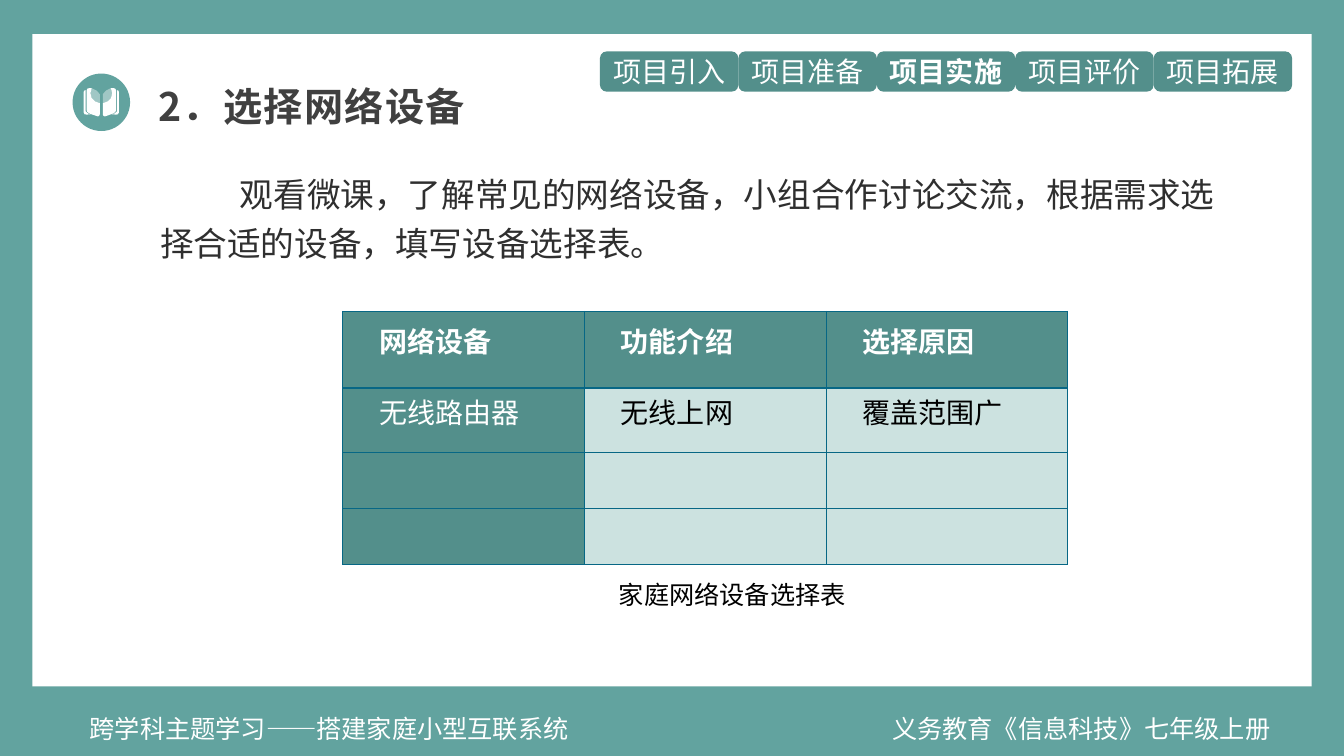
from pptx import Presentation
from pptx.dml.color import RGBColor
from pptx.enum.shapes import MSO_SHAPE
from pptx.enum.text import MSO_ANCHOR, MSO_AUTO_SIZE, PP_ALIGN
from pptx.oxml.ns import qn
from pptx.util import Inches, Pt
from lxml.etree import SubElement

W, H = Inches(13.33), Inches(7.5)
FONT = "Noto Sans CJK SC"
COLORS = {
    "frame": "62A39F", "deep": "538F8B", "pale": "CCE2E0", "border": "076785",
    "white": "FFFFFF", "black": "000000", "title": "404040", "body": "2F2F2F",
}
TABS = ["项目引入", "项目准备", "项目实施", "项目评价", "项目拓展"]
CURRENT_TAB = "项目实施"
ROWS = [
    ["网络设备", "功能介绍", "选择原因"],
    ["无线路由器", "无线上网", "覆盖范围广"],
    ["", "", ""],
    ["", "", ""],
]
ROW_SHARES = [10.13, 8.53, 7.4, 7.4]

# Right half of the book, in 570ths of the icon's width from its centre
PAGE = [(15, 10), (15, 120), (22, 135), (35, 140), (95, 120), (120, 110),
        (140, 95), (145, 80), (145, -120), (138, -135), (120, -140),
        (95, -140), (108, -90), (95, -40), (65, -10)]
COVER = [(145, 100), (130, 112), (105, 120), (145, 122), (165, 120),
         (175, 100), (175, -100), (170, -115), (155, -120), (155, 90)]
LEAF = [(95, -140), (45, -115), (15, -80), (15, 10), (65, -10), (95, -40),
        (108, -90)]


def across(share):
    """Length of a percentage of the slide's width."""
    return round(W * share / 100)


def down(share):
    """Length of a percentage of the slide's height."""
    return round(H * share / 100)


def box(x, y, w, h):
    return across(x), down(y), across(w), down(h)


def rgb(name):
    return RGBColor.from_string(COLORS[name])


def paint(sp, color):
    sp.shadow.inherit = False
    sp.fill.solid()
    sp.fill.fore_color.rgb = rgb(color)
    sp.line.fill.background()


def style(p, size, color, bold=False, font=FONT):
    p.font.size, p.font.bold, p.font.name = Pt(size), bold, font
    p.font.color.rgb = rgb(color)
    SubElement(p.font._element, qn("a:ea")).set("typeface", FONT)


def indent(p, length):
    pPr = p._p.get_or_add_pPr()
    pPr.set("marL", "0")
    pPr.set("indent", str(length))


def add_shape(s, kind, area, color):
    sp = s.shapes.add_shape(kind, *area)
    paint(sp, color)
    return sp


def add_text(s, area, text, size, color, bold=False, wrap=True):
    tf = s.shapes.add_textbox(*area).text_frame
    tf.word_wrap = wrap
    tf.auto_size = MSO_AUTO_SIZE.SHAPE_TO_FIT_TEXT
    p = tf.paragraphs[0]
    p.text = text
    style(p, size, color, bold)
    return p


def add_tabs(s):
    width = 10.3
    for i, label in enumerate(TABS):
        area = box(44.64 + i * width, 6.8, width, 5.33)
        tf = add_shape(s, MSO_SHAPE.ROUNDED_RECTANGLE, area, "deep").text_frame
        tf.vertical_anchor = MSO_ANCHOR.MIDDLE
        p = tf.paragraphs[0]
        p.text = label
        p.alignment = PP_ALIGN.CENTER
        style(p, 20, "white", label == CURRENT_TAB)


def add_mirrored(s, points, centre, scale):
    """Draw an outline and its mirror image as one white shape."""
    mirror = [(-x, y) for x, y in points]
    fb = s.shapes.build_freeform(*points[0], scale=scale)
    fb.add_line_segments(points[1:])
    fb.move_to(*mirror[0])
    fb.add_line_segments(mirror[1:])
    sp = fb.convert_to_shape(*centre)
    paint(sp, "white")
    return sp


def add_book_icon(s):
    x, y, w, h = box(5.4, 9.73, 4.28, 7.6)
    add_shape(s, MSO_SHAPE.OVAL, (x, y, w, h), "frame")
    centre, scale = (x + w // 2, y + h // 2), w / 570
    for outline in (PAGE, COVER):
        add_mirrored(s, outline, centre, scale)
    leaf = add_mirrored(s, LEAF, centre, scale)
    color = leaf._element.spPr.find(qn("a:solidFill"))[0]
    SubElement(color, qn("a:alpha")).set("val", "40000")


def add_borders(cell):
    tcPr = cell._tc.get_or_add_tcPr()
    for i, side in enumerate(("lnL", "lnR", "lnT", "lnB")):
        ln = tcPr.makeelement(qn(f"a:{side}"), {"w": str(Pt(1))})
        fill = SubElement(ln, qn("a:solidFill"))
        SubElement(fill, qn("a:srgbClr")).set("val", COLORS["border"])
        tcPr.insert(i, ln)


def fill_cell(cell, text, header, first):
    cell.fill.solid()
    cell.fill.fore_color.rgb = rgb("deep" if header or first else "pale")
    add_borders(cell)
    cell.vertical_anchor = MSO_ANCHOR.MIDDLE
    cell.margin_left = cell.margin_right = across(0.53)
    cell.margin_top = cell.margin_bottom = 0
    if text:
        p = cell.text_frame.paragraphs[0]
        p.text = text
        p.line_spacing = Pt(15.6)
        indent(p, across(2.18))
        color = "white" if header or first else "black"
        style(p, 20, color, header, "Calibri")


def add_device_table(s):
    area = box(25.51, 41.2, 53.94, sum(ROW_SHARES))
    table = s.shapes.add_table(len(ROWS), len(ROWS[0]), *area).table
    for r, (share, texts) in enumerate(zip(ROW_SHARES, ROWS)):
        table.rows[r].height = down(share)
        for c, text in enumerate(texts):
            fill_cell(table.cell(r, c), text, r == 0, c == 0)


def main():
    prs = Presentation()
    prs.slide_width, prs.slide_height = W, H
    s = prs.slides.add_slide(prs.slide_layouts[6])
    s.background.fill.solid()
    s.background.fill.fore_color.rgb = rgb("frame")

    add_shape(s, MSO_SHAPE.RECTANGLE, box(2.4, 4.53, 95.2, 86.27), "white")
    add_text(s, box(65.64, 93.73, 30.98, 5.33),
             "义务教育《信息科技》七年级上册", 18, "white")
    add_text(s, box(5.93, 93.73, 37.51, 5.33),
             "跨学科主题学习——搭建家庭小型互联系统", 18, "white", wrap=False)
    add_tabs(s)

    title = add_text(s, box(8.1, 10.27, 30.16, 7.6),
                     "2．选择网络设备", 28, "title", bold=True)
    title.alignment = PP_ALIGN.CENTER
    title.font._element.set("spc", "100")
    body = add_text(s, box(11.18, 21.33, 80.5, 13.73),
                    "观看微课，了解常见的网络设备，小组合作讨论交流，"
                    "根据需求选择合适的设备，填写设备选择表。", 24, "body")
    body.line_spacing = 1.2
    indent(body, across(5.93))

    add_book_icon(s)
    add_text(s, box(45.31, 76, 18.53, 5.33),
             "家庭网络设备选择表", 18, "black", wrap=False)
    add_device_table(s)
    prs.save("out.pptx")


if __name__ == "__main__":
    main()
